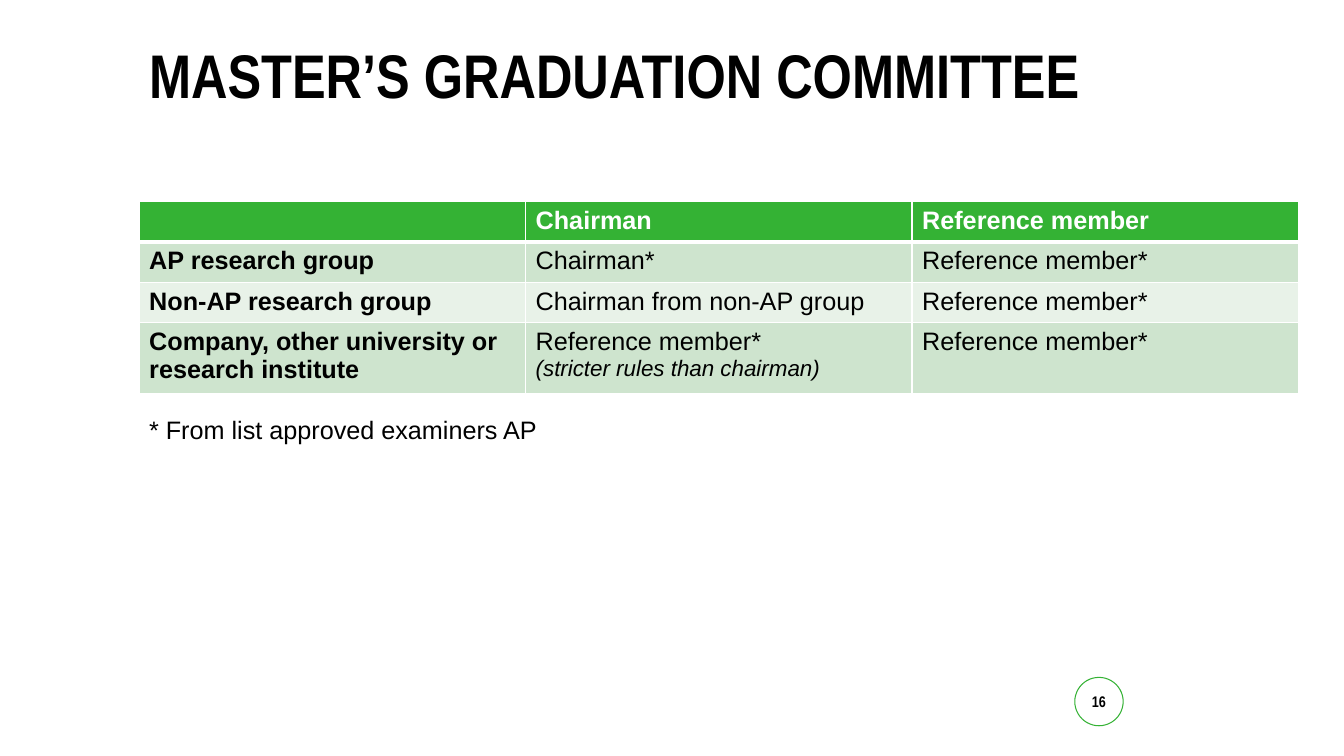
from lxml import etree
from pptx import Presentation
from pptx.dml.color import RGBColor
from pptx.enum import shapes, text
from pptx.oxml import ns
from pptx.util import Inches, Pt

GREEN = RGBColor(0x34, 0xB2, 0x34)
MID_GREEN = RGBColor(0xCE, 0xE4, 0xCE)
PALE_GREEN = RGBColor(0xE8, 0xF2, 0xE8)
WHITE = RGBColor(0xFF, 0xFF, 0xFF)
BLACK = RGBColor(0, 0, 0)

LEFT, WIDTH = 1.38, 11.5
ROW_HEIGHTS = [0.4, 0.4, 0.4, 0.67]
COMMITTEE = [
    ["", "Chairman", "Reference member"],
    ["AP research group", "Chairman*", "Reference member*"],
    ["Non-AP research group", "Chairman from non-AP group", "Reference member*"],
    ["Company, other university or research institute", "Reference member*", "Reference member*"],
]
CHAIRMAN_NOTE = "(stricter rules than chairman)"


def add_span(para, words, size, font="Arial", color=BLACK, bold=False, italic=False):
    span = para.add_run()
    span.text = words
    span.font.name = font
    span.font.size = Pt(size)
    span.font.color.rgb = color
    span.font.bold = bold
    span.font.italic = italic


def add_text_box(page, left, top, width, height):
    box = page.shapes.add_textbox(Inches(left), Inches(top), Inches(width), Inches(height))
    box.text_frame.word_wrap = True
    return box.text_frame.paragraphs[0]


def add_title(page, words):
    para = add_text_box(page, LEFT, 0.4, WIDTH, 1.45)
    para.line_spacing = 0.9
    add_span(para, words, 44, "Arial Narrow", bold=True)


def set_borders(cell, bottom_width):
    properties = cell._tc.get_or_add_tcPr()
    widths = {"lnL": 1, "lnR": 1, "lnT": 1, "lnB": bottom_width}
    for side, width in widths.items():
        line = etree.SubElement(properties, ns.qn(f"a:{side}"), w=str(Pt(width)))
        fill = etree.SubElement(line, ns.qn("a:solidFill"))
        etree.SubElement(fill, ns.qn("a:srgbClr"), val=str(WHITE))


def style_cell(cell, row, column, words):
    header = row == 0
    set_borders(cell, 3 if header else 1)
    cell.fill.solid()
    cell.fill.fore_color.rgb = GREEN if header else (MID_GREEN if row % 2 else PALE_GREEN)
    if words:
        add_span(cell.text_frame.paragraphs[0], words, 18,
                 color=WHITE if header else BLACK, bold=header or column == 0)


def add_committee_table(page):
    columns = len(COMMITTEE[0])
    table = page.shapes.add_table(
        len(COMMITTEE), columns, Inches(LEFT), Inches(2),
        Inches(WIDTH), Inches(sum(ROW_HEIGHTS))).table
    for column in table.columns:
        column.width = Inches(WIDTH / columns)
    for row, entries in enumerate(COMMITTEE):
        table.rows[row].height = Inches(ROW_HEIGHTS[row])
        for column, words in enumerate(entries):
            style_cell(table.cell(row, column), row, column, words)
    para = table.cell(3, 1).text_frame.paragraphs[0]
    para.add_line_break()
    add_span(para, CHAIRMAN_NOTE, 16, italic=True)


def add_page_number(page, number):
    circle = page.shapes.add_shape(
        shapes.MSO_SHAPE.OVAL, Inches(10.66), Inches(6.72), Inches(0.48), Inches(0.48))
    circle.shadow.inherit = False
    circle.fill.solid()
    circle.fill.fore_color.rgb = WHITE
    circle.line.color.rgb = GREEN
    circle.line.width = Pt(0.75)
    frame = circle.text_frame
    frame.margin_left = frame.margin_right = frame.margin_top = frame.margin_bottom = 0
    frame.vertical_anchor = text.MSO_ANCHOR.MIDDLE
    para = frame.paragraphs[0]
    para.alignment = text.PP_ALIGN.CENTER
    add_span(para, number, 11, "Arial Narrow", bold=True)


def main():
    deck = Presentation()
    deck.slide_width, deck.slide_height = Inches(13.33), Inches(7.5)
    page = deck.slides.add_slide(deck.slide_layouts[6])
    add_title(page, "MASTER’S GRADUATION COMMITTEE")
    add_committee_table(page)
    add_page_number(page, "16")
    footnote = add_text_box(page, LEFT, 4.06, 11.39, 0.4)
    add_span(footnote, "* From list approved examiners AP", 18)
    deck.save("out.pptx")


if __name__ == "__main__":
    main()
